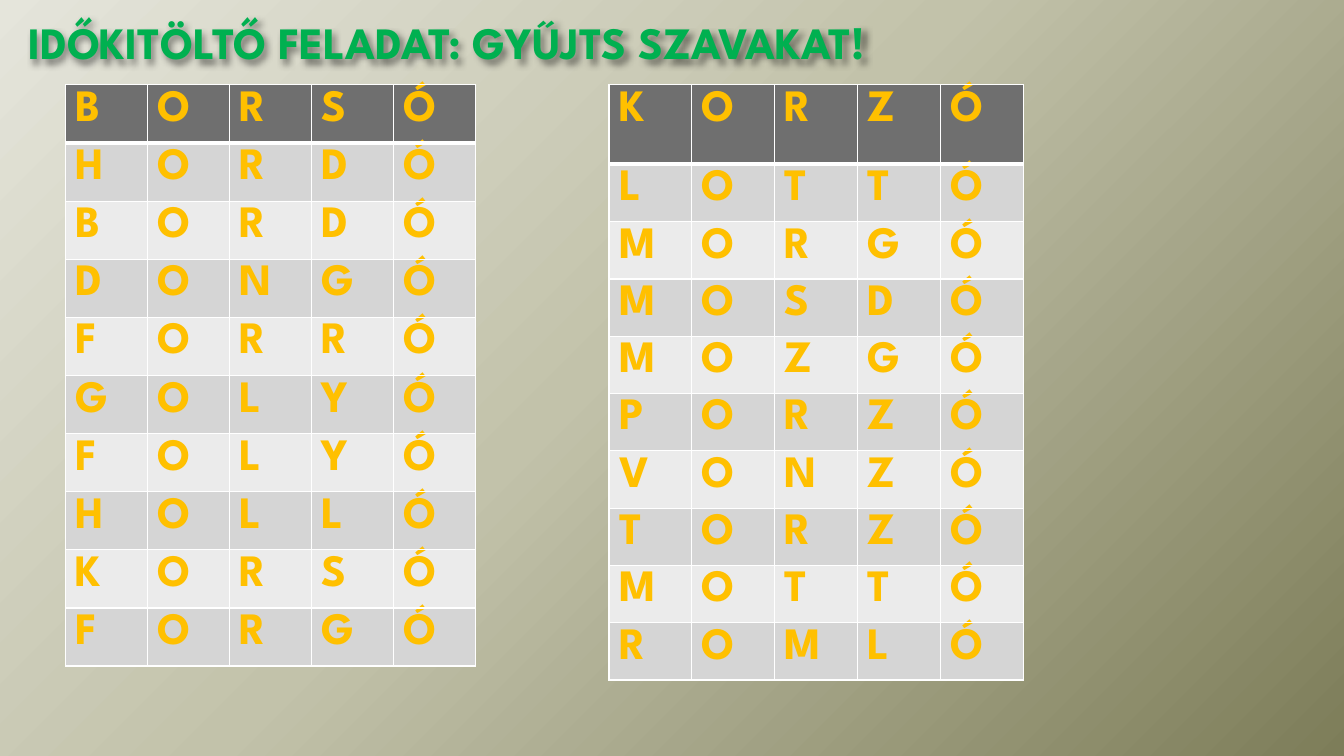
from lxml import etree
from pptx import Presentation
from pptx.dml.color import RGBColor
from pptx.enum.text import MSO_ANCHOR, PP_ALIGN
from pptx.oxml import parse_xml
from pptx.oxml.ns import nsdecls, qn
from pptx.util import Inches, Pt

MIDDLE = MSO_ANCHOR.MIDDLE
LEFT = PP_ALIGN.LEFT

GREEN = RGBColor(0x00, 0xB0, 0x50)
AMBER = RGBColor(0xFF, 0xC0, 0x00)
WHITE = RGBColor(0xFF, 0xFF, 0xFF)
BLACK = RGBColor(0x00, 0x00, 0x00)
HEADER_GREY = RGBColor(0x6F, 0x6F, 0x6F)
BAND_GREYS = (RGBColor(0xEB, 0xEB, 0xEB), RGBColor(0xD5, 0xD5, 0xD5))
BACKDROP_STOPS = (
    (0, RGBColor(0xE5, 0xE5, 0xDB)),
    (46, RGBColor(0xC2, 0xC2, 0xAA)),
    (100, RGBColor(0x7D, 0x7D, 0x59)),
)

FONT = "League Spartan"
HEADING = "IDŐKITÖLTŐ FELADAT: GYŰJTS SZAVAKAT!"
LEFT_WORDS = ("BORSÓ HORDÓ BORDÓ DONGÓ FORRÓ "
              "GOLYÓ FOLYÓ HOLLÓ KORSÓ FORGÓ").split()
RIGHT_WORDS = ("KORZÓ LOTTÓ MORGÓ MOSDÓ MOZGÓ "
               "PORZÓ VONZÓ TORZÓ MOTTÓ ROMLÓ").split()


def style_text(paragraph, color):
    font = paragraph.font
    font.name = FONT
    font.size = Pt(32)
    font.bold = True
    font.color.rgb = color


def paint_backdrop(slide):
    fill = slide.background.fill
    fill.gradient()
    fill.gradient_angle = 315
    stops = fill.gradient_stops
    stop_list = next(slide.background._cSld.iter(qn("a:gsLst")))
    del stops
    for stop in list(stop_list):
        stop_list.remove(stop)
    for percent, color in BACKDROP_STOPS:
        stop = etree.SubElement(stop_list, qn("a:gs"), pos=str(percent * 1000))
        etree.SubElement(stop, qn("a:srgbClr"), val=str(color))


def add_heading(slide, left, top, width, height):
    heading = slide.shapes.title
    heading.left, heading.top = Inches(left), Inches(top)
    heading.width, heading.height = Inches(width), Inches(height)
    frame = heading.text_frame
    frame.text = HEADING
    frame.word_wrap = True
    frame.vertical_anchor = MIDDLE
    frame.paragraphs[0].alignment = LEFT
    style_text(frame.paragraphs[0], GREEN)
    heading._element.spPr.append(parse_xml(
        f'<a:effectLst {nsdecls("a")}>'
        '<a:outerShdw blurRad="38100" dist="38100" dir="2700000" algn="tl">'
        f'<a:srgbClr val="{BLACK}"><a:alpha val="43000"/></a:srgbClr>'
        '</a:outerShdw></a:effectLst>'))


def add_borders(cell, top, bottom):
    properties = cell._tc.get_or_add_tcPr()
    for side, points in (("L", 1), ("R", 1), ("T", top), ("B", bottom)):
        line = etree.SubElement(properties, qn(f"a:ln{side}"), w=str(Pt(points)))
        fill = etree.SubElement(line, qn("a:solidFill"))
        etree.SubElement(fill, qn("a:srgbClr"), val=str(WHITE))


def add_word_grid(slide, words, left, top, width, height, header_height):
    row_count, column_count = len(words), len(words[0])
    grid = slide.shapes.add_table(
        row_count, column_count,
        Inches(left), Inches(top), Inches(width), Inches(height)).table
    for column in grid.columns:
        column.width = Inches(width / column_count)
    row_height = (height - header_height) / (row_count - 1)
    for index, (row, word) in enumerate(zip(grid.rows, words)):
        row.height = Inches(row_height if index else header_height)
        for cell, letter in zip(row.cells, word):
            cell.text = letter
            style_text(cell.text_frame.paragraphs[0], AMBER)
            add_borders(cell, 3 if index == 1 else 1, 1 if index else 3)
            cell.fill.solid()
            cell.fill.fore_color.rgb = BAND_GREYS[index % 2] if index else HEADER_GREY


def main():
    deck = Presentation()
    deck.slide_width, deck.slide_height = Inches(13.33), Inches(7.5)
    slide = deck.slides.add_slide(deck.slide_layouts[5])
    paint_backdrop(slide)
    add_heading(slide, 0.18, 0.08, 12.99, 0.66)
    add_word_grid(slide, LEFT_WORDS, 0.65, 0.84, 4.07, 5.77, 0.58)
    add_word_grid(slide, RIGHT_WORDS, 6.04, 0.84, 4.11, 5.91, 0.79)
    deck.save("out.pptx")


if __name__ == "__main__":
    main()
